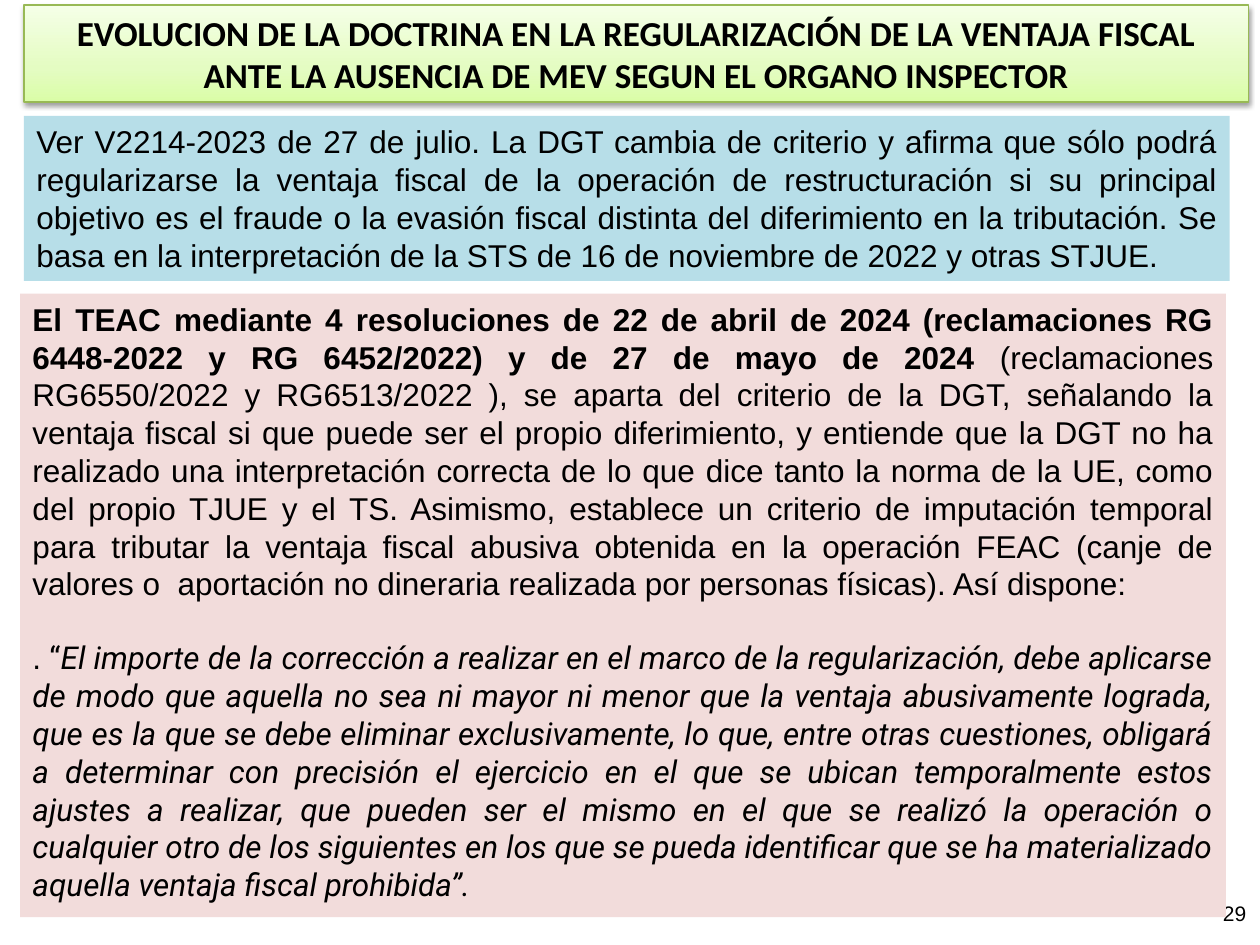
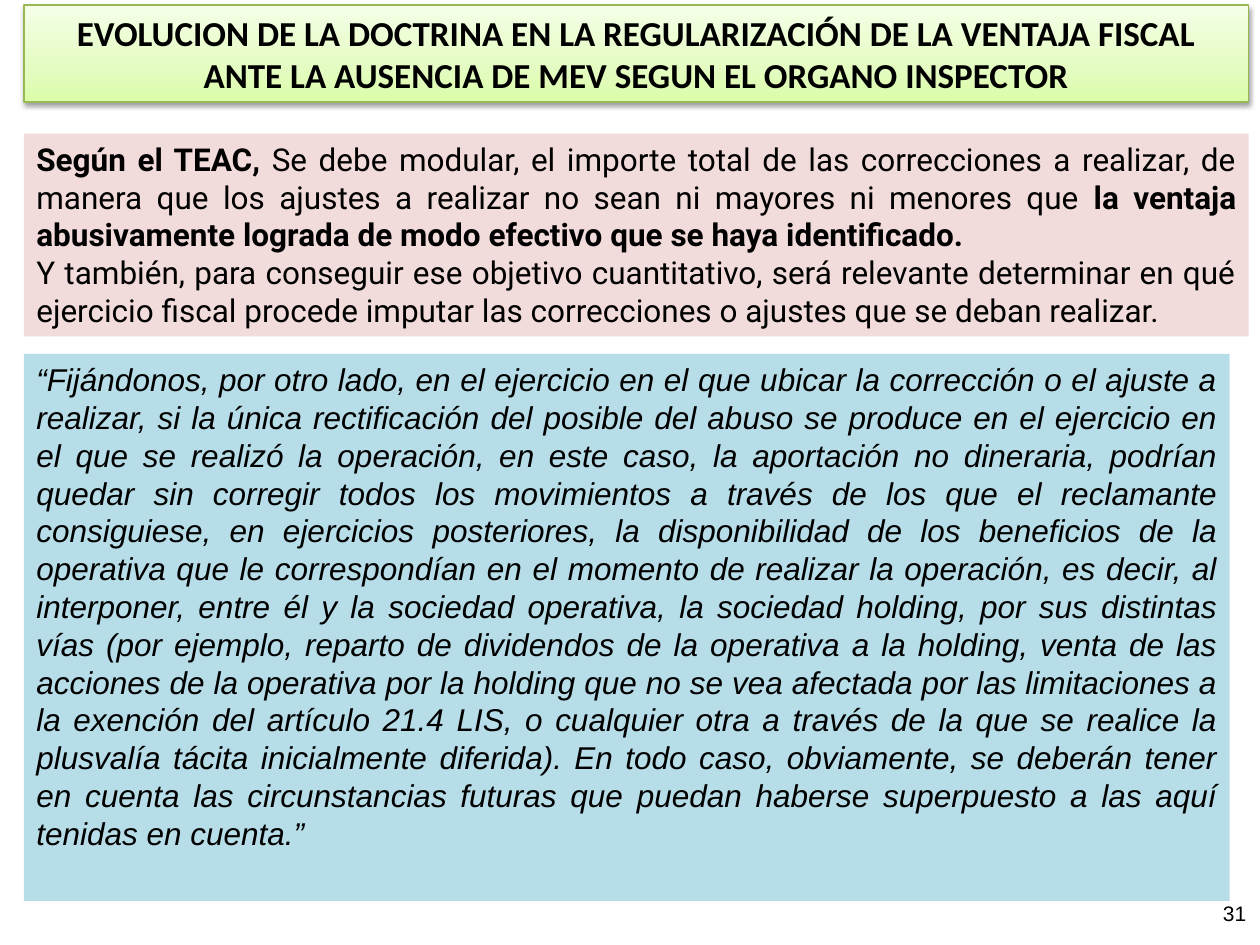
from copy import deepcopy

from lxml.etree import SubElement
from pptx import Presentation
from pptx.dml.color import RGBColor
from pptx.enum.shapes import MSO_SHAPE as Shape
from pptx.enum.text import MSO_ANCHOR as Anchor, MSO_AUTO_SIZE as AutoSize, PP_ALIGN as Align
from pptx.oxml.ns import qn
from pptx.util import Inches, Pt

WIDTH, HEIGHT = 10, 7.5
LEFT, PANEL_WIDTH, BAND_WIDTH = 0.19, 9.57, 9.72
BLUE, PINK, BLACK = "B7DEE8", "F2DCDB", "000000"
BAND_STOPS = [(0, "DAFDA7"), (0.35, "E4FCC2"), (1, "F5FFE7")]
BAND_LINE = "98B955"
BLANK_LINE = 20.7

TITLE = ("EVOLUCION DE LA DOCTRINA EN LA REGULARIZACIÓN DE LA VENTAJA FISCAL "
         "ANTE LA AUSENCIA DE MEV SEGUN EL ORGANO INSPECTOR")

TITLE_FONT = {"name": "Calibri", "size": Pt(20), "bold": True}
NUMBER_FONT = {"name": "Arial", "size": Pt(12)}
PLAIN = {"name": "Arial", "size": Pt(18)}
STRONG = PLAIN | {"bold": True}
QUOTE = PLAIN | {"italic": True}
ROBOTO = PLAIN | {"name": "Roboto"}
ROBOTO_STRONG = ROBOTO | {"bold": True}
ROBOTO_QUOTE = ROBOTO | {"italic": True}

DGT_VIEW = [
    [("Ver V2214-2023 de 27 de julio. La DGT cambia de criterio y afirma que sólo podrá "
      "regularizarse la ventaja fiscal de la operación de restructuración si su principal "
      "objetivo es el fraude o la evasión fiscal distinta del diferimiento en la tributación. "
      "Se basa en la interpretación de la STS de 16 de noviembre de 2022 y otras STJUE.", PLAIN)],
]
TEAC_RULINGS = [
    [("El TEAC mediante 4 resoluciones de 22 de abril de 2024 (reclamaciones RG 6448-2022 "
      "y RG 6452/2022) y de 27 de mayo de 2024", STRONG),
     (" (reclamaciones RG6550/2022 y RG6513/2022 ), se aparta del criterio de la DGT, "
      "señalando la ventaja fiscal si que puede ser el propio diferimiento, y entiende que "
      "la DGT no ha realizado una interpretación correcta de lo que dice tanto la norma de "
      "la UE, como del propio TJUE y el TS. Asimismo, establece un criterio de imputación "
      "temporal para tributar la ventaja fiscal abusiva obtenida en la operación FEAC (canje "
      "de valores o  aportación no dineraria realizada por personas físicas). Así dispone:",
      PLAIN)],
    [(".", PLAIN), (" “", ROBOTO),
     ("El importe de la corrección a realizar en el marco de la regularización, debe "
      "aplicarse de modo que aquella no sea ni mayor ni menor que la ventaja abusivamente "
      "lograda, que es la que se debe eliminar exclusivamente, lo que, entre otras "
      "cuestiones, obligará a determinar con precisión el ejercicio en el que se ubican "
      "temporalmente estos ajustes a realizar, que pueden ser el mismo en el que se realizó "
      "la operación o cualquier otro de los siguientes en los que se pueda identificar que "
      "se ha materializado aquella ventaja fiscal prohibida”.", ROBOTO_QUOTE)],
]
TEAC_SUMMARY = [
    [("Según el TEAC, ", ROBOTO_STRONG),
     ("Se debe modular, el importe total de las correcciones a realizar, de manera que los "
      "ajustes a realizar no sean ni mayores ni menores que ", ROBOTO),
     ("la ventaja abusivamente lograda de modo efectivo que se haya identificado.",
      ROBOTO_STRONG)],
    [("Y también, para conseguir ese objetivo cuantitativo, será relevante determinar en qué "
      "ejercicio fiscal procede imputar las correcciones o ajustes que se deban realizar.",
      ROBOTO)],
]
TEAC_QUOTE = [
    [("“Fijándonos, por otro lado, en el ejercicio en el que ubicar la corrección o el ajuste "
      "a realizar, si la única rectificación del posible del abuso se produce en el ejercicio "
      "en el que se realizó la operación, en este caso, la aportación no dineraria, podrían "
      "quedar sin corregir todos los movimientos a través de los que el reclamante "
      "consiguiese, en ejercicios posteriores, la disponibilidad de los beneficios de la "
      "operativa que le correspondían en el momento de realizar la operación, ", QUOTE),
     ("es decir, al interponer, entre él y la sociedad operativa, la sociedad holding, por "
      "sus distintas vías (por ejemplo, reparto de dividendos de la operativa a la holding, "
      "venta de las acciones de la operativa por la holding que no se vea afectada por las "
      "limitaciones a la exención del artículo 21.4 LIS, o cualquier otra a través de la que "
      "se realice la plusvalía tácita inicialmente diferida). En todo caso, obviamente, se "
      "deberán tener en cuenta las circunstancias futuras que puedan haberse superpuesto a "
      "las aquí tenidas en cuenta.”", QUOTE)],
]

PAGES = [
    ("29", [
        ((LEFT, 0.92, PANEL_WIDTH, 1.31), BLUE, DGT_VIEW, 0),
        ((0.16, 2.33, PANEL_WIDTH, 4.95), PINK, TEAC_RULINGS, BLANK_LINE),
    ]),
    ("31", [
        ((LEFT, 2.81, PANEL_WIDTH, 4.34), BLUE, TEAC_QUOTE, 0),
        ((LEFT, 1.06, BAND_WIDTH, 1.61), PINK, TEAC_SUMMARY, 0),
    ]),
]


def color(value):
    return RGBColor.from_string(value)


def assign(target, values):
    for name, value in values.items():
        setattr(target, name, value)


def write(box, paragraphs, align, anchor=Anchor.TOP, gap=0):
    frame = box.text_frame
    assign(frame, {"word_wrap": True, "auto_size": AutoSize.NONE, "vertical_anchor": anchor})
    for index, spans in enumerate(paragraphs):
        para = frame.add_paragraph() if index else frame.paragraphs[0]
        assign(para, {"alignment": align, "space_before": Pt(gap if index else 0)})
        for text, font in spans:
            span = para.add_run()
            span.text = text
            assign(span.font, font)
            span.font.color.rgb = color(BLACK)


def add_band_shadow(band):
    band.shadow.inherit = False
    effects = band.element.spPr.find(qn("a:effectLst"))
    shadow = SubElement(effects, qn("a:outerShdw"), blurRad=str(Pt(3.1)), dist=str(Pt(1.6)),
                        dir="5400000", rotWithShape="0")
    shade = SubElement(shadow, qn("a:srgbClr"), val=BLACK)
    SubElement(shade, qn("a:alpha"), val="38000")


def add_title(page):
    band = page.shapes.title
    assign(band, {"left": Inches(LEFT), "top": Inches(0.04),
                  "width": Inches(BAND_WIDTH), "height": Inches(0.77)})
    band.fill.gradient()
    band.fill.gradient_angle = 90
    stop_list = band.element.spPr.find(qn("a:gradFill")).find(qn("a:gsLst"))
    stop_list.append(deepcopy(stop_list[0]))
    for stop, (position, tint) in zip(band.fill.gradient_stops, BAND_STOPS):
        stop.position = position
        stop.color.rgb = color(tint)
    band.line.color.rgb = color(BAND_LINE)
    band.line.width = Pt(0.75)
    add_band_shadow(band)
    write(band, [[(TITLE, TITLE_FONT)]], Align.CENTER)


def add_number(page, number):
    side = 0.4
    box = page.shapes.add_textbox(Inches(WIDTH - side - 0.01), Inches(HEIGHT - side - 0.05),
                                  Inches(side), Inches(side))
    write(box, [[(number, NUMBER_FONT)]], Align.RIGHT, Anchor.MIDDLE)


def add_panel(page, place, tint, paragraphs, gap):
    panel = page.shapes.add_shape(Shape.RECTANGLE, *map(Inches, place))
    panel.shadow.inherit = False
    panel.fill.solid()
    panel.fill.fore_color.rgb = color(tint)
    panel.line.fill.background()
    write(panel, paragraphs, Align.JUSTIFY, gap=gap)


def main():
    deck = Presentation()
    assign(deck, {"slide_width": Inches(WIDTH), "slide_height": Inches(HEIGHT)})
    for number, panels in PAGES:
        page = deck.slides.add_slide(deck.slide_layouts.get_by_name("Title Only"))
        add_title(page)
        add_number(page, number)
        for panel in panels:
            add_panel(page, *panel)
    deck.save("out.pptx")


if __name__ == "__main__":
    main()
